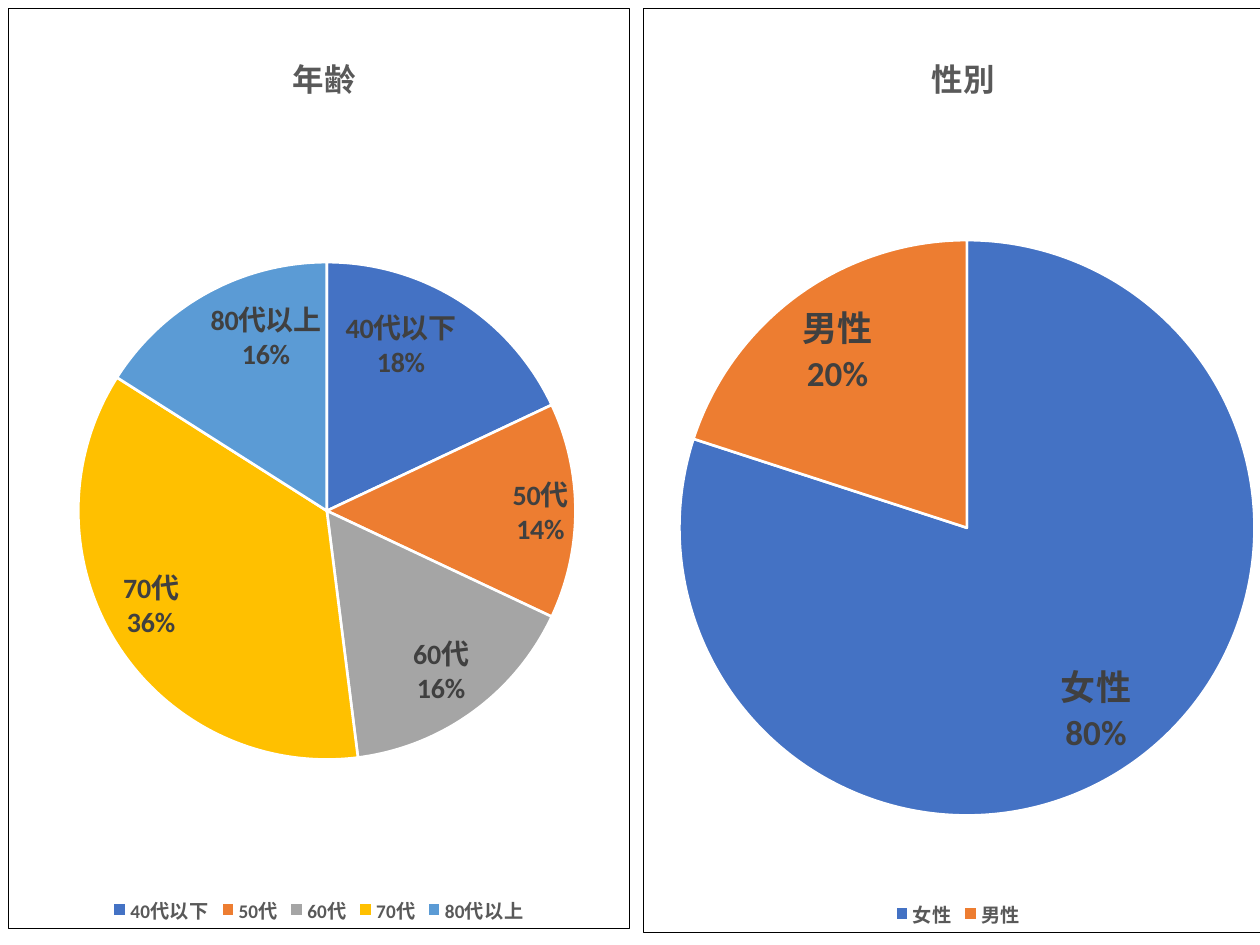
from pptx import Presentation
from pptx.chart.data import CategoryChartData
from pptx.dml.color import RGBColor
from pptx.enum.chart import XL_CHART_TYPE, XL_LABEL_POSITION, XL_LEGEND_POSITION
from pptx.oxml import parse_xml
from pptx.oxml.ns import nsdecls, qn
from pptx.util import Pt

PIE = XL_CHART_TYPE.PIE
BOTTOM = XL_LEGEND_POSITION.BOTTOM
INSIDE_END = XL_LABEL_POSITION.INSIDE_END
PX = 914400 // 126

THEME = {
    "font": "Calibri",
    "slices": ["4472C4", "ED7D31", "A5A5A5", "FFC000", "5B9BD5"],
    "text": "595959", "label": "404040", "paper": "FFFFFF", "frame": "000000",
    "title_size": 18, "legend_size": 11,
}

# Boxes are left, top, width, height in px; pie and title lie on the slide too
CHARTS = [
    {"title": "年齢", "box": (8, 8, 622, 921), "pie": (78, 262, 498, 498),
     "title_at": (287, 45), "label_size": 16,
     "shares": {"40代以下": 18, "50代": 14, "60代": 16, "70代": 36, "80代以上": 16}},
    {"title": "性別", "box": (643, 8, 631, 925), "pie": (679, 240, 576, 576),
     "title_at": (926, 45), "label_size": 20,
     "shares": {"女性": 80, "男性": 20}},
]


def set_font(font, size, color):
    values = {"name": THEME["font"], "size": Pt(size), "bold": True}
    for name, value in values.items():
        setattr(font, name, value)
    font.color.rgb = RGBColor.from_string(color)


def set_layout(parent, position, box, area):
    """Place a chart part at area, given in slide px, inside the chart's box."""
    left, top, width, height = box
    parts = {"x": (area[0] - left) / width, "y": (area[1] - top) / height}
    target = ""
    if len(area) == 4:
        target = '<c:layoutTarget val="inner"/>'
        parts.update(w=area[2] / width, h=area[3] / height)
    modes = "".join(f'<c:{key}Mode val="edge"/>' for key in "xy")
    sizes = "".join(f'<c:{key} val="{value:.4f}"/>' for key, value in parts.items())
    for old in parent.findall(qn("c:layout")):
        parent.remove(old)
    parent.insert(position, parse_xml(
        f'<c:layout {nsdecls("c")}><c:manualLayout>{target}{modes}{sizes}'
        '</c:manualLayout></c:layout>'))


deck = Presentation()
deck.slide_width, deck.slide_height = 1260 * PX, 945 * PX
page = deck.slides.add_slide(deck.slide_layouts[6])

for item in CHARTS:
    # Data
    data = CategoryChartData()
    data.categories = list(item["shares"])
    data.add_series("Series 1", list(item["shares"].values()))
    box = item["box"]
    chart = page.shapes.add_chart(PIE, *[length * PX for length in box], data).chart
    chart.font.name, chart.font.size = THEME["font"], Pt(10)

    # Title
    chart.has_title = True
    para = chart.chart_title.text_frame.paragraphs[0]
    span = para.add_run()
    span.text = item["title"]
    set_font(span.font, THEME["title_size"], THEME["text"])

    # Legend
    chart.has_legend = True
    chart.legend.position = BOTTOM
    chart.legend.include_in_layout = False
    set_font(chart.legend.font, THEME["legend_size"], THEME["text"])

    # Slices
    plot = chart.plots[0]
    plot.vary_by_categories = True
    series = plot.series[0]
    for index, color in enumerate(THEME["slices"][:len(item["shares"])]):
        look = series.points[index].format
        look.fill.solid()
        look.fill.fore_color.rgb = RGBColor.from_string(color)
        look.line.color.rgb = RGBColor.from_string(THEME["paper"])
        look.line.width = Pt(1.5)

    # Labels
    labels = series.data_labels
    settings = {"show_value": False, "show_percentage": True,
                "show_category_name": True, "number_format": "0%",
                "number_format_is_linked": False, "position": INSIDE_END}
    for name, value in settings.items():
        setattr(labels, name, value)
    set_font(labels.font, item["label_size"], THEME["label"])
    separator = parse_xml(f'<c:separator {nsdecls("c")}>\n</c:separator>')
    labels._element.find(qn("c:showBubbleSize")).addnext(separator)

    # Positions and frame
    space = chart.element
    set_layout(space.find(".//" + qn("c:plotArea")), 0, box, item["pie"])
    set_layout(space.find(".//" + qn("c:title")), 1, box, item["title_at"])
    space.find(qn("c:chart")).addnext(parse_xml(
        f'<c:spPr {nsdecls("c", "a")}>'
        f'<a:solidFill><a:srgbClr val="{THEME["paper"]}"/></a:solidFill>'
        f'<a:ln w="{Pt(0.5)}"><a:solidFill><a:srgbClr val="{THEME["frame"]}"/>'
        '</a:solidFill></a:ln></c:spPr>'))

deck.save("out.pptx")
